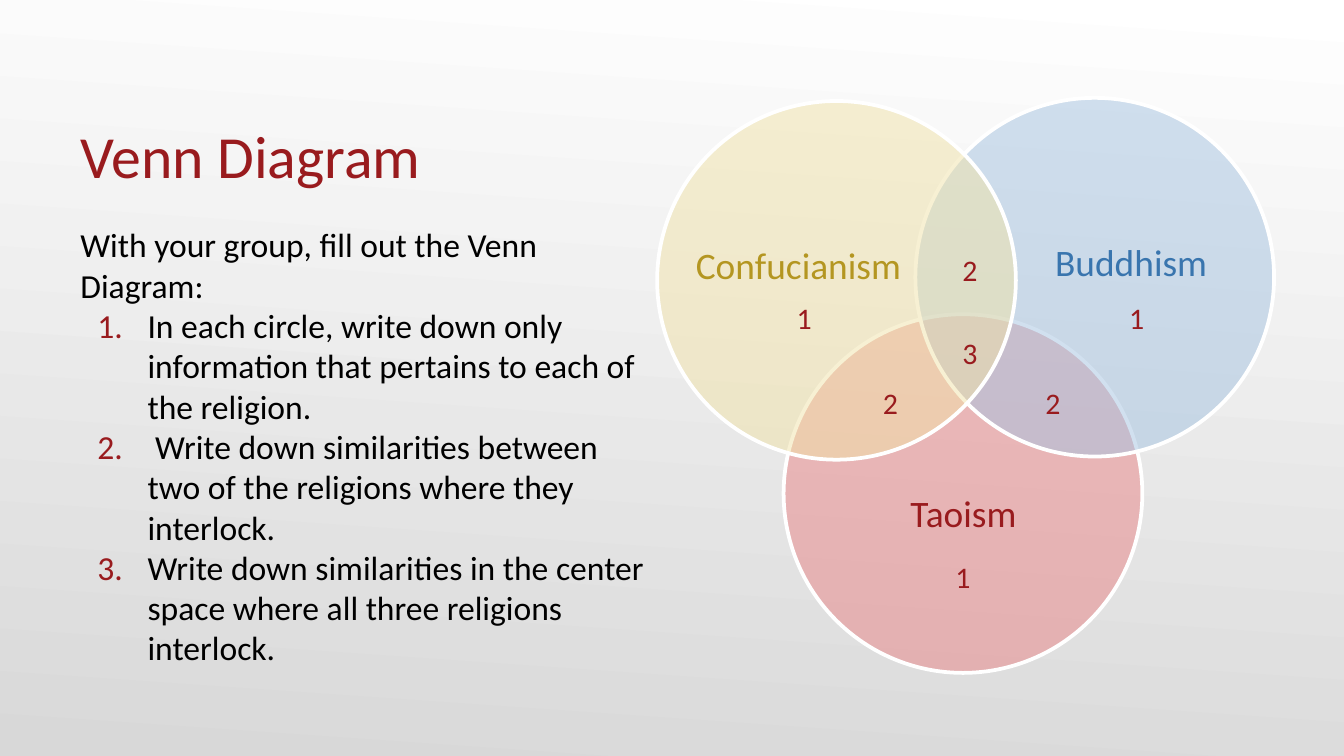
from lxml.etree import SubElement
from pptx import Presentation
from pptx.dml.color import RGBColor
from pptx.enum.shapes import MSO_SHAPE
from pptx.enum.text import MSO_ANCHOR, PP_ALIGN
from pptx.oxml.ns import qn
from pptx.util import Cm, Pt

WHITE = RGBColor(0xFF, 0xFF, 0xFF)
GREY = RGBColor(0xD8, 0xD8, 0xD8)
BLACK = RGBColor(0x00, 0x00, 0x00)
CRIMSON = RGBColor(0x99, 0x1B, 0x1E)
BLUE = RGBColor(0x39, 0x75, 0xAE)
GOLD = RGBColor(0xB4, 0x96, 0x21)
PALE_RED = RGBColor(0xE9, 0x84, 0x86)
PALE_BLUE = RGBColor(0xA4, 0xC3, 0xE1)
PALE_GOLD = RGBColor(0xF1, 0xE3, 0xA8)


class VennSlide:
    font = "Calibri"
    diameter = 6.78

    def __init__(self, presentation):
        self.slide = presentation.slides.add_slide(presentation.slide_layouts[6])

    def background(self, start, end, angle):
        fill = self.slide.background.fill
        fill.gradient()
        fill.gradient_angle = angle
        for stop, color, position in zip(fill.gradient_stops, (start, end), (0, 1)):
            stop.color.rgb = color
            stop.position = position

    def circle(self, left, top, color):
        circle = self.slide.shapes.add_shape(
            MSO_SHAPE.OVAL, Cm(left), Cm(top), Cm(self.diameter), Cm(self.diameter))
        circle.shadow.inherit = False
        circle.fill.solid()
        circle.fill.fore_color.rgb = color
        tone = circle.element.spPr.find(qn("a:solidFill"))[0]
        SubElement(tone, qn("a:alpha"), val="50000")
        circle.line.color.rgb = WHITE
        circle.line.width = Pt(2)

    def frame(self, left, top, width, height, insets, anchor=MSO_ANCHOR.TOP):
        frame = self.slide.shapes.add_textbox(
            Cm(left), Cm(top), Cm(width), Cm(height)).text_frame
        frame.word_wrap = True
        frame.vertical_anchor = anchor
        (frame.margin_left, frame.margin_top,
         frame.margin_right, frame.margin_bottom) = map(Cm, insets)
        return frame

    def text(self, paragraph, wording, size, color, align=PP_ALIGN.LEFT):
        paragraph.alignment = align
        run = paragraph.add_run()
        run.text = wording
        run.font.name = self.font
        run.font.size = Pt(size)
        run.font.color.rgb = color

    def title(self, box, wording):
        frame = self.frame(*box, (0.25,) * 4, MSO_ANCHOR.BOTTOM)
        self.text(frame.paragraphs[0], wording, 32, CRIMSON)

    def label(self, box, wording, color, above=0, below=0):
        frame = self.frame(*box, (0, above, 0, below), MSO_ANCHOR.MIDDLE)
        self.text(frame.paragraphs[0], wording, 20, color, PP_ALIGN.CENTER)

    def number(self, left, top, count):
        frame = self.frame(left, top, 0.84, 0.94, (0.25, 0.13, 0.25, 0.13))
        self.text(frame.paragraphs[0], count, 16, CRIMSON, PP_ALIGN.CENTER)

    def instructions(self, box, intro, steps):
        frame = self.frame(*box, (0.25,) * 4)
        self.text(frame.paragraphs[0], intro, 18, BLACK)
        for step in steps:
            paragraph = frame.add_paragraph()
            properties = paragraph._p.get_or_add_pPr()
            properties.set("marL", str(Cm(1.27)))
            properties.set("indent", str(Cm(-0.95)))
            bullet_color = SubElement(properties, qn("a:buClr"))
            SubElement(bullet_color, qn("a:srgbClr"), val=str(CRIMSON))
            SubElement(properties, qn("a:buFont"), typeface=self.font)
            SubElement(properties, qn("a:buAutoNum"), type="arabicPeriod")
            self.text(paragraph, step, 18, BLACK)


def main():
    presentation = Presentation()
    presentation.slide_width = Cm(25.4)
    presentation.slide_height = Cm(14.29)
    venn = VennSlide(presentation)
    venn.background(WHITE, GREY, 266)

    # Circles and their names
    venn.circle(14.81, 5.94, PALE_RED)
    venn.label((15.72, 7.14, 4.98, 3.05), "Taoism", CRIMSON, above=2.05)
    venn.circle(17.3, 1.85, PALE_BLUE)
    venn.label((19.35, 3.61, 4.06, 3.73), "Buddhism", BLUE, below=1.05)
    venn.circle(12.42, 1.91, PALE_GOLD)
    venn.label((13.06, 3.66, 4.06, 3.73), "Confucianism", GOLD, below=1.05)

    # How many religions share each region
    regions = [
        (14.78, 5.54, "1"), (16.41, 7.14, "2"), (17.91, 6.2, "3"),
        (21.06, 5.54, "1"), (19.48, 7.14, "2"), (17.91, 4.62, "2"),
        (17.78, 10.44, "1"),
    ]
    for left, top, count in regions:
        venn.number(left, top, count)

    # Title and instructions
    venn.title((1.27, 1.47, 22.86, 2.39), "Venn Diagram")
    venn.instructions(
        (1.27, 3.99, 11.23, 9.25),
        "With your group, fill out the Venn Diagram:",
        ["In each circle, write down only information that pertains to each of the religion.",
         " Write down similarities between two of the religions where they interlock.",
         "Write down similarities in the center space where all three religions interlock."])

    presentation.save("out.pptx")


if __name__ == "__main__":
    main()
